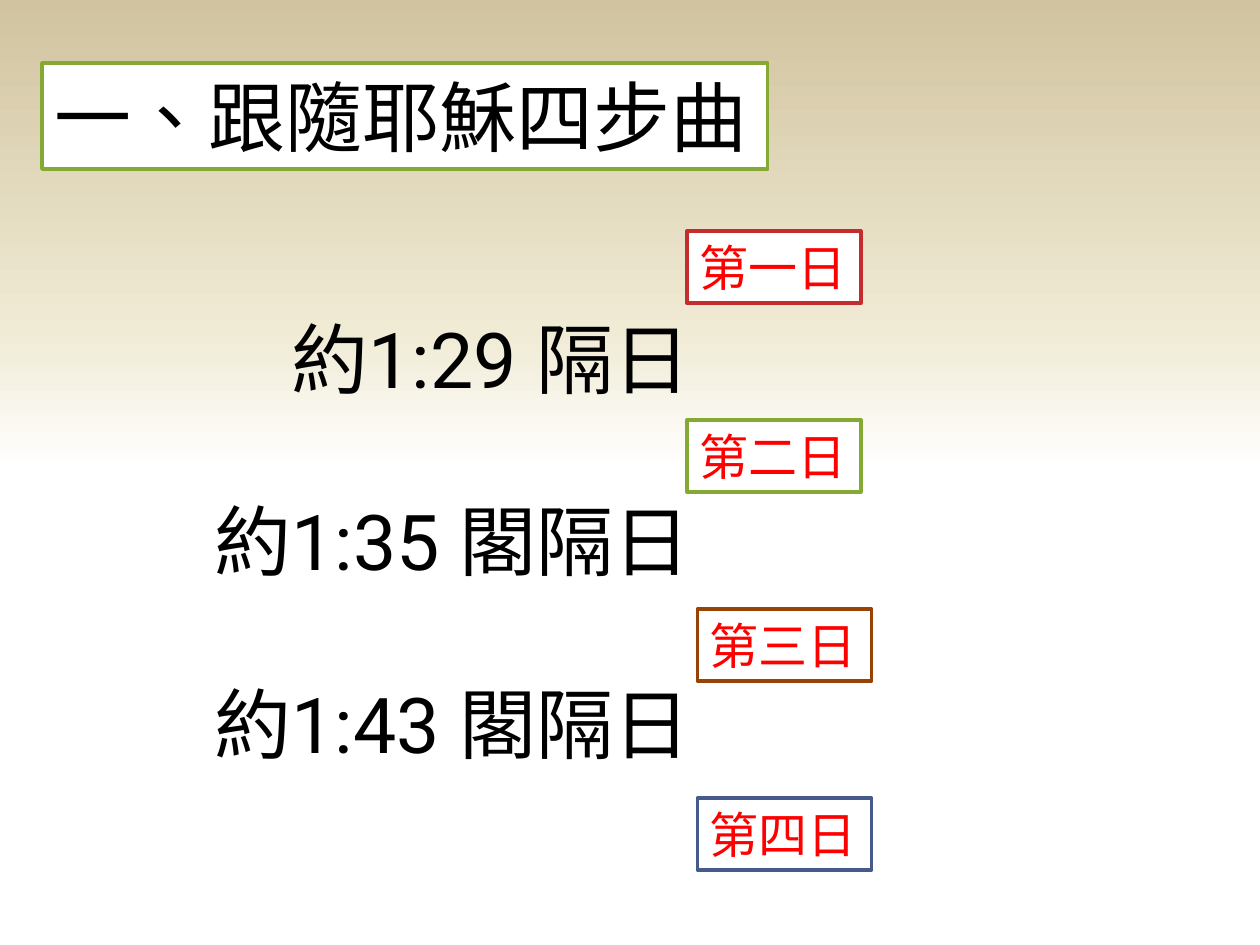
from dataclasses import dataclass

from lxml import etree
from pptx import Presentation
from pptx.dml.color import RGBColor
from pptx.enum import shapes, text
from pptx.oxml import ns
from pptx.util import Pt

FONT = "Roboto"
COLORS = {
    "white": "FFFFFF", "cream": "F0EBD5", "tan": "D1C39F",
    "black": "000000", "red": "FF0000", "crimson": "C32D2E",
    "green": "84AA33", "brown": "964305", "blue": "475A8D",
}


@dataclass
class Day:
    label: str
    left: float
    edge: str


def rgb(name: str) -> RGBColor:
    return RGBColor.from_string(COLORS[name])


def place(shape, left: float, top: float, width: float, height: float) -> None:
    shape.left, shape.top = Pt(left), Pt(top)
    shape.width, shape.height = Pt(width), Pt(height)


def style(shape, size: float, color: str, align, wrap: bool) -> None:
    frame = shape.text_frame
    frame.word_wrap = wrap
    frame.auto_size = text.MSO_AUTO_SIZE.SHAPE_TO_FIT_TEXT
    frame.vertical_anchor = text.MSO_ANCHOR.TOP
    for par in frame.paragraphs:
        par.alignment = align
        for run in par.runs:
            run.font.size = Pt(size)
            run.font.color.rgb = rgb(color)
            run.font.name = FONT
            props = run.font._element
            props.set("lang", "zh-TW")
            etree.SubElement(props, ns.qn("a:ea"), typeface=FONT)


def frame_box(shape, edge: str) -> None:
    shape.fill.solid()
    shape.fill.fore_color.rgb = rgb("white")
    shape.line.color.rgb = rgb(edge)
    shape.line.width = Pt(2)


def paint_back(slide) -> None:
    fill = slide.background.fill
    fill.gradient()
    fill.gradient_angle = 90
    stops = slide.background._cSld.find(".//" + ns.qn("a:gsLst"))
    for stop in list(stops):
        stops.remove(stop)
    for pos, name in ((50, "white"), (65, "cream"), (100, "tan")):
        stop = etree.SubElement(stops, ns.qn("a:gs"), pos=str(pos * 1000))
        etree.SubElement(stop, ns.qn("a:srgbClr"), val=COLORS[name])


def add_day(slide, day: Day, top: float) -> None:
    box = slide.shapes.add_shape(shapes.MSO_SHAPE.RECTANGLE, Pt(day.left),
                                 Pt(top), Pt(99.4), Pt(41.2))
    box.shadow.inherit = False
    frame_box(box, day.edge)
    box.text_frame.text = day.label
    style(box, 28, "red", text.PP_ALIGN.LEFT, False)


def main() -> None:
    deck = Presentation()
    deck.slide_width, deck.slide_height = Pt(720), Pt(540)
    slide = deck.slides.add_slide(deck.slide_layouts[1])
    paint_back(slide)

    # Verse list
    body = slide.placeholders[1]
    place(body, 54, 174.2, 347.8, 273.6)
    body.text_frame.text = "約1:29 隔日\n約1:35 閣隔日\n約1:43 閣隔日"
    style(body, 44, "black", text.PP_ALIGN.RIGHT, True)
    for i, par in enumerate(body.text_frame.paragraphs):
        par.line_spacing = 1.0
        par.space_before = Pt(51.6 if i else 0)
        props = par._p.get_or_add_pPr()
        props.set("marL", "0")
        props.set("indent", "0")
        etree.SubElement(props, ns.qn("a:buNone"))

    # Day tags, evenly spaced down the slide
    days = [
        Day("第一日", 392.5, "crimson"),
        Day("第二日", 392.5, "green"),
        Day("第三日", 398.6, "brown"),
        Day("第四日", 398.6, "blue"),
    ]
    for i, day in enumerate(days):
        add_day(slide, day, 132 + 108 * i)

    # Title
    title = slide.shapes.title
    place(title, 24, 36, 414.7, 60.6)
    frame_box(title, "green")
    title.text_frame.text = "一、跟隨耶穌四步曲"
    style(title, 44, "black", text.PP_ALIGN.LEFT, False)

    deck.save("out.pptx")


if __name__ == "__main__":
    main()
